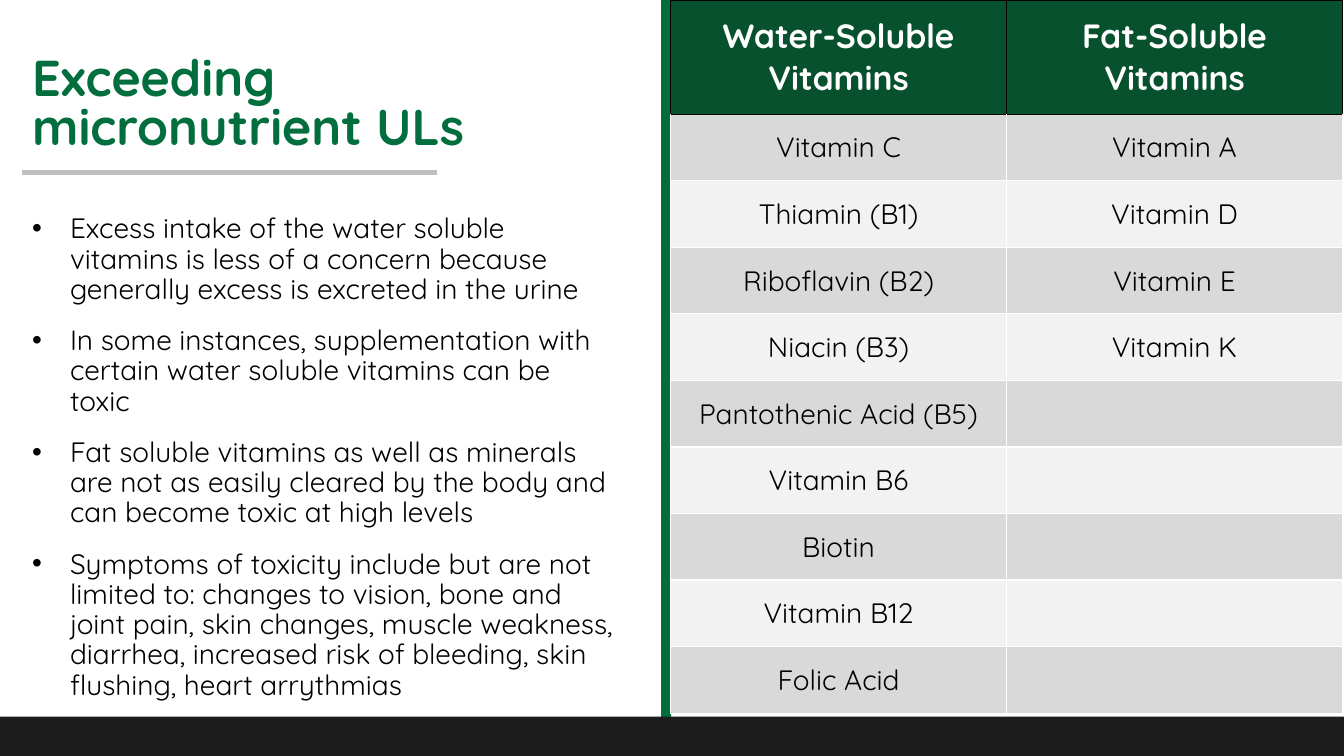
from itertools import zip_longest

from lxml.etree import SubElement
from pptx import Presentation
from pptx.dml.color import RGBColor
from pptx.enum.shapes import MSO_CONNECTOR, MSO_SHAPE
from pptx.enum.text import MSO_ANCHOR, MSO_AUTO_SIZE, PP_ALIGN
from pptx.oxml import parse_xml
from pptx.oxml.ns import nsdecls, qn
from pptx.util import Pt


def paint(color_format, hex_color):
    color_format.rgb = RGBColor.from_string(hex_color)


def write(paragraph, text, color, font_format, paragraph_format):
    run = paragraph.add_run()
    run.text = text
    paint(run.font.color, color)
    for name, value in font_format.items():
        setattr(run.font, name, value)
    for name, value in paragraph_format.items():
        setattr(paragraph, name, value)


title_font = {"name": "Quicksand", "size": Pt(36), "bold": True}
title_paragraph = {"alignment": PP_ALIGN.LEFT, "line_spacing": 0.8}
advice_font = {"name": "Quicksand", "size": Pt(20)}
advice_paragraph = {
    "alignment": PP_ALIGN.LEFT,
    "line_spacing": 0.9,
    "space_before": Pt(10),
    "space_after": Pt(5),
}
heading_font = {"name": "Quicksand", "size": Pt(24), "bold": True}
vitamin_font = {"name": "Quicksand", "size": Pt(20), "bold": False}
centered = {"alignment": PP_ALIGN.CENTER}

advice = [
    "Excess intake of the water soluble vitamins is less of a concern because generally excess is excreted in the urine",
    "In some instances, supplementation with certain water soluble vitamins can be toxic",
    "Fat soluble vitamins as well as minerals are not as easily cleared by the body and can become toxic at high levels",
    "Symptoms of toxicity include but are not limited to: changes to vision, bone and joint pain, skin changes, "
    "muscle weakness, diarrhea, increased risk of bleeding, skin flushing, heart arrythmias",
]
water_soluble = [
    "Water-Soluble Vitamins", "Vitamin C", "Thiamin (B1)", "Riboflavin (B2)", "Niacin (B3)",
    "Pantothenic Acid (B5)", "Vitamin B6", "Biotin", "Vitamin B12", "Folic Acid",
]
fat_soluble = ["Fat-Soluble Vitamins", "Vitamin A", "Vitamin D", "Vitamin E", "Vitamin K"]

presentation = Presentation()
presentation.slide_width = Pt(960)
presentation.slide_height = Pt(540)
slide = presentation.slides.add_slide(presentation.slide_layouts[1])
shapes = slide.shapes
paint(slide.background.fill.fore_color if slide.background.fill.solid() else slide.background.fill.fore_color, "FFFFFF")

title = shapes.title
advice_list = slide.placeholders[1]
for placeholder, box, anchor in [
    (title, (15.8, 42.5, 431.3, 67), MSO_ANCHOR.MIDDLE),
    (advice_list, (15.8, 149.8, 432, 324.7), MSO_ANCHOR.TOP),
]:
    placeholder.left, placeholder.top, placeholder.width, placeholder.height = map(Pt, box)
    placeholder.text_frame.vertical_anchor = anchor
    placeholder.text_frame.auto_size = MSO_AUTO_SIZE.NONE

write(title.text_frame.paragraphs[0], "Exceeding micronutrient ULs", "036E3D", title_font, title_paragraph)
for index, point in enumerate(advice):
    frame = advice_list.text_frame
    paragraph = frame.add_paragraph() if index else frame.paragraphs[0]
    write(paragraph, point, "000000", advice_font, advice_paragraph)

for box, color in [((472.3, 0, 7.2, 517.7), "036E3D"), ((0, 511.9, 960, 28.1), "1C1C1C")]:
    band = shapes.add_shape(MSO_SHAPE.RECTANGLE, *map(Pt, box))
    band.shadow.inherit = False
    band.fill.solid()
    paint(band.fill.fore_color, color)
    band.line.fill.background()

vitamins = shapes.add_table(len(water_soluble), 2, Pt(479), Pt(0), Pt(480), Pt(510)).table
for row_index, names in enumerate(zip_longest(water_soluble, fat_soluble, fillvalue="")):
    is_heading = row_index == 0
    vitamins.rows[row_index].height = Pt(81.6 if is_heading else 47.55)
    fill = "07512E" if is_heading else ("F2F2F2", "D9D9D9")[row_index % 2]
    border = "000000" if is_heading else "FFFFFF"
    for column_index, name in enumerate(names):
        cell = vitamins.cell(row_index, column_index)
        cell.vertical_anchor = MSO_ANCHOR.MIDDLE
        cell.fill.solid()
        paint(cell.fill.fore_color, fill)
        if name:
            write(
                cell.text_frame.paragraphs[0],
                name,
                "FFFFFF" if is_heading else "000000",
                heading_font if is_heading else vitamin_font,
                centered,
            )
        cell_properties = cell._tc.get_or_add_tcPr()
        for position, side in enumerate("LRTB"):
            side_color = "000000" if side == "T" and row_index == 1 else border
            cell_properties.insert(position, parse_xml(
                f'<a:ln{side} {nsdecls("a")} w="{Pt(1)}"><a:solidFill>'
                f'<a:srgbClr val="{side_color}"/></a:solidFill></a:ln{side}>'
            ))

underline = shapes.add_connector(MSO_CONNECTOR.STRAIGHT, Pt(15.8), Pt(123.2), Pt(312.5), Pt(123.2))
paint(underline.line.color, "BFBFBF")
underline.line.width = Pt(3)
SubElement(underline._element.spPr, qn("a:effectLst"))

presentation.save("out.pptx")
